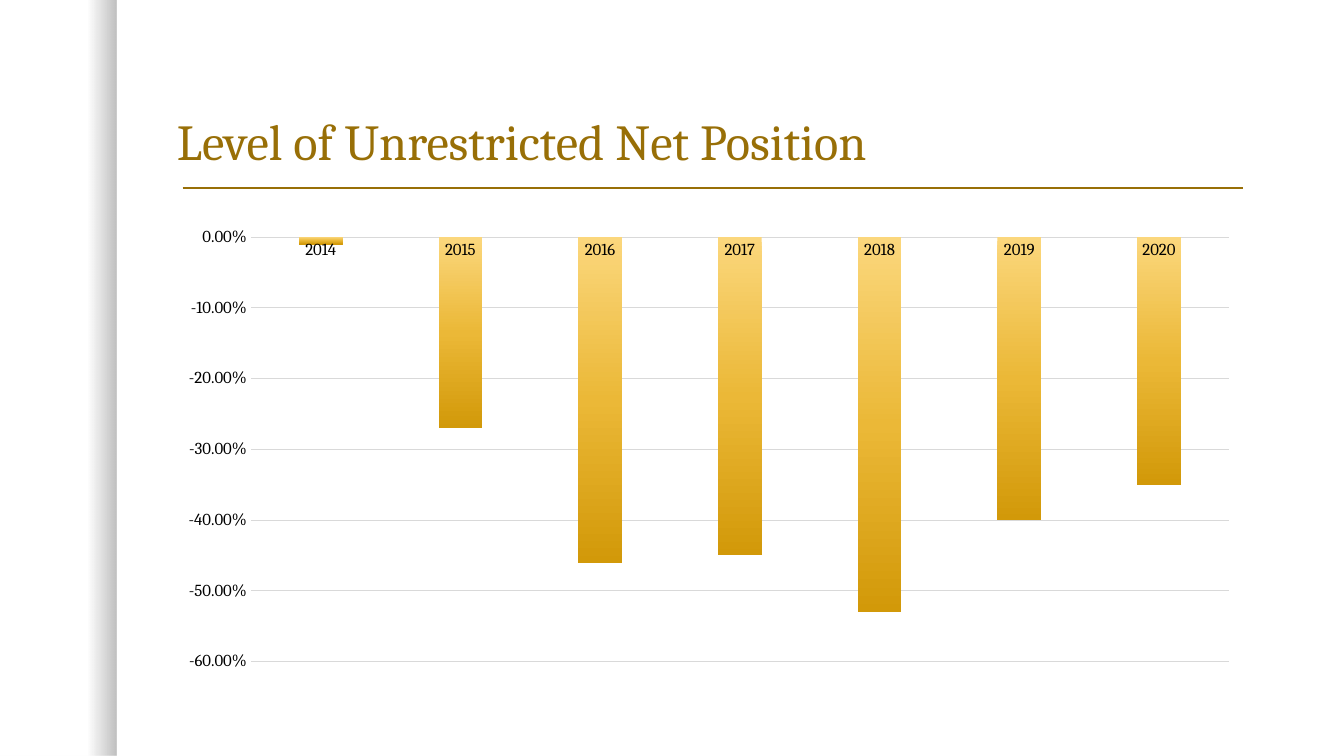
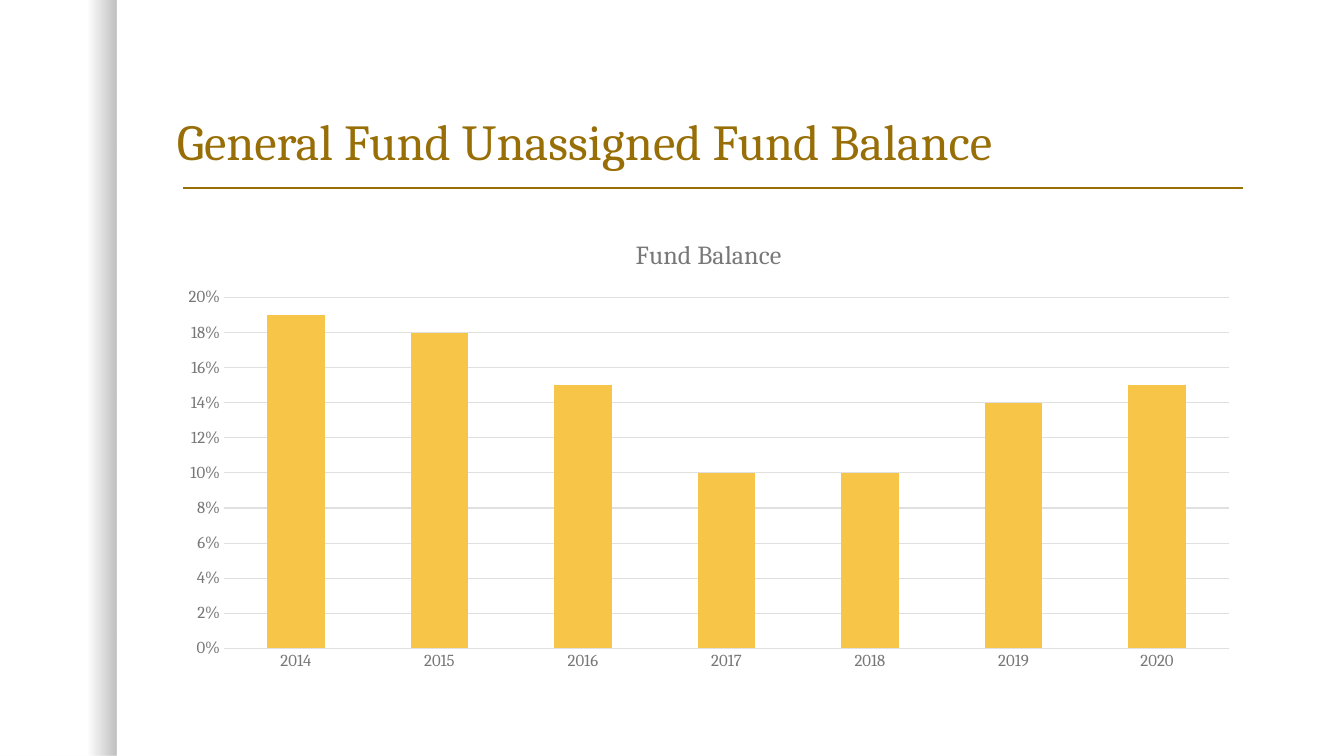
from dataclasses import dataclass
from typing import Any, Optional

from lxml import etree
from pptx import Presentation
from pptx.chart.axis import CategoryAxis, ValueAxis
from pptx.chart.data import CategoryChartData
from pptx.dml.color import RGBColor
from pptx.dml.line import LineFormat
from pptx.enum.chart import XL_CHART_TYPE, XL_TICK_MARK
from pptx.enum.shapes import MSO_CONNECTOR, MSO_SHAPE
from pptx.enum.text import MSO_ANCHOR
from pptx.oxml.ns import qn
from pptx.slide import Slide
from pptx.util import Emu, Pt

PX = 9525
FONT = "Cambria"
COLORS = {
    "background": "FFFFFF",
    "title": "986F07",
    "black": "000000",
    "gray": "787878",
    "base": "303030",
    "axis": "D9D9D9",
    "grid": "E0E0E0",
    "gold": "F7C547",
    "gold_light": "FBD77C",
    "gold_mid": "EBB837",
    "gold_dark": "D29909",
}
YEARS = [str(year) for year in range(2014, 2021)]


@dataclass(frozen=True)
class Box:
    left: int
    top: int
    width: int
    height: int

    def emu(self) -> list[Emu]:
        return [px(n) for n in (self.left, self.top, self.width, self.height)]


@dataclass(frozen=True)
class Stop:
    pos: int
    color: str
    alpha: int = 100


@dataclass(frozen=True)
class ChartSlide:
    title: str
    series: str
    values: list[float]
    text: str
    grid: str
    number_format: str
    scale: dict[str, float]
    plot: dict[str, int]
    fill: list[Stop]
    axis_line: Optional[str] = None
    chart_title: Optional[str] = None


BAND = Box(0, 0, 111, 720)
TITLE = Box(159, 40, 1032, 128)
CHART = Box(159, 208, 1032, 440)
RULE_LEFT, RULE_RIGHT, RULE_TOP = 174, 1184, 179
BAND_STOPS = [Stop(75, "black", 0), Stop(100, "black", 25)]

SLIDES = [
    ChartSlide(
        title="Level of Unrestricted Net Position",
        series="Series 1",
        values=[-0.01, -0.27, -0.46, -0.45, -0.53, -0.4, -0.35],
        text="black",
        grid="axis",
        number_format="0.00%",
        scale={"minimum_scale": -0.6, "maximum_scale": 0, "major_unit": 0.1},
        plot={"gap_width": 219, "overlap": -27},
        fill=[Stop(0, "gold_light"), Stop(50, "gold_mid"), Stop(100, "gold_dark")],
        axis_line="axis",
    ),
    ChartSlide(
        title="General Fund Unassigned Fund Balance",
        series="Fund Balance",
        values=[0.19, 0.18, 0.15, 0.1, 0.1, 0.14, 0.15],
        text="gray",
        grid="grid",
        number_format="0%",
        scale={"minimum_scale": 0, "maximum_scale": 0.2, "major_unit": 0.02},
        plot={"gap_width": 150},
        fill=[Stop(0, "gold")],
        chart_title="Fund Balance",
    ),
]


def px(n: int) -> Emu:
    return Emu(n * PX)


def rgb(name: str) -> RGBColor:
    return RGBColor.from_string(COLORS[name])


def apply(target: Any, values: dict[str, Any]) -> None:
    for name, value in values.items():
        setattr(target, name, value)


def style_font(font: Any, size: float, color: str) -> None:
    apply(font, {"name": FONT, "size": Pt(size), "bold": False})
    font.color.rgb = rgb(color)


def style_line(line: LineFormat, color: Optional[str], width: float = 0.75) -> None:
    if color is None:
        line.fill.background()
        return
    line.color.rgb = rgb(color)
    line.width = Pt(width)


def fill_gradient(sp_pr: Any, stops: list[Stop], angle: int) -> None:
    solid = sp_pr.find(qn("a:solidFill"))
    grad = etree.Element(qn("a:gradFill"), rotWithShape="1")
    gs_lst = etree.SubElement(grad, qn("a:gsLst"))
    for stop in stops:
        gs = etree.SubElement(gs_lst, qn("a:gs"), pos=str(stop.pos * 1000))
        clr = etree.SubElement(gs, qn("a:srgbClr"), val=COLORS[stop.color])
        if stop.alpha < 100:
            etree.SubElement(clr, qn("a:alpha"), val=str(stop.alpha * 1000))
    etree.SubElement(grad, qn("a:lin"), ang=str(angle * 60000), scaled="0")
    sp_pr.replace(solid, grad)


def add_frame(s: Slide, title: str) -> None:
    s.background.fill.solid()
    s.background.fill.fore_color.rgb = rgb("background")

    band = s.shapes.add_shape(MSO_SHAPE.RECTANGLE, *BAND.emu())
    band.shadow.inherit = False
    band.line.fill.background()
    band.fill.solid()
    fill_gradient(band._element.spPr, BAND_STOPS, 0)

    rule = s.shapes.add_connector(
        MSO_CONNECTOR.STRAIGHT,
        px(RULE_LEFT), px(RULE_TOP), px(RULE_RIGHT), px(RULE_TOP),
    )
    style_line(rule.line, "title", 1)
    etree.SubElement(rule._element.spPr, qn("a:effectLst"))

    tf = s.shapes.add_textbox(*TITLE.emu()).text_frame
    apply(tf, {"word_wrap": True, "vertical_anchor": MSO_ANCHOR.BOTTOM})
    p = tf.paragraphs[0]
    p.line_spacing = 0.9
    r = p.add_run()
    r.text = title
    style_font(r.font, 36, "title")


def style_axis(axis: CategoryAxis | ValueAxis, text: str, line: Optional[str]) -> None:
    apply(axis, {
        "major_tick_mark": XL_TICK_MARK.NONE,
        "minor_tick_mark": XL_TICK_MARK.NONE,
    })
    style_font(axis.tick_labels.font, 12, text)
    style_line(axis.format.line, line)


def add_column_chart(s: Slide, spec_: ChartSlide) -> None:
    data = CategoryChartData(number_format=spec_.number_format)
    data.categories = YEARS
    data.add_series(spec_.series, spec_.values)
    chart = s.shapes.add_chart(
        XL_CHART_TYPE.COLUMN_CLUSTERED, *CHART.emu(), data
    ).chart
    style_font(chart.font, 10, "base")
    apply(chart, {"has_legend": False, "has_title": spec_.chart_title is not None})
    if spec_.chart_title:
        tf = chart.chart_title.text_frame
        tf.text = spec_.chart_title
        style_font(tf.paragraphs[0].runs[0].font, 18.6, spec_.text)
        chart.chart_title.include_in_layout = False

    style_axis(chart.category_axis, spec_.text, spec_.axis_line)
    value_axis = chart.value_axis
    style_axis(value_axis, spec_.text, None)
    apply(value_axis, {"has_major_gridlines": True, **spec_.scale})
    style_line(value_axis.major_gridlines.format.line, spec_.grid)
    apply(value_axis.tick_labels, {
        "number_format": spec_.number_format,
        "number_format_is_linked": False,
    })

    plot = chart.plots[0]
    apply(plot, {"vary_by_categories": False, **spec_.plot})
    series = plot.series[0]
    series.invert_if_negative = False
    series.format.fill.solid()
    series.format.fill.fore_color.rgb = rgb(spec_.fill[0].color)
    if len(spec_.fill) > 1:
        fill_gradient(series._element.spPr, spec_.fill, 90)


def main() -> None:
    prs = Presentation()
    apply(prs, {"slide_width": px(1280), "slide_height": px(720)})
    for item in SLIDES:
        s = prs.slides.add_slide(prs.slide_layouts[6])
        add_frame(s, item.title)
        add_column_chart(s, item)
    prs.save("out.pptx")


if __name__ == "__main__":
    main()
